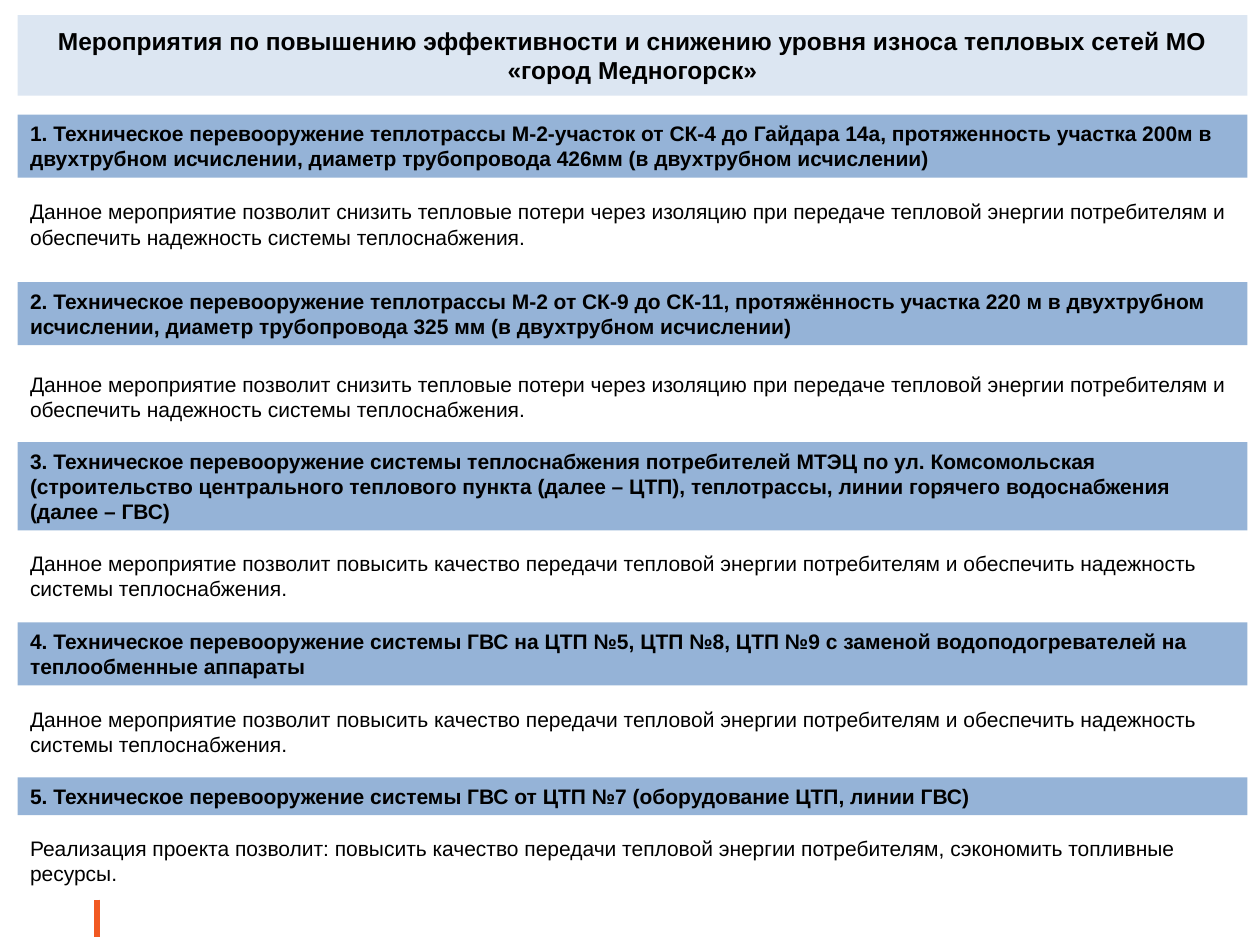
import pptx
import pptx.dml.color
import pptx.enum.shapes
import pptx.enum.text
import pptx.oxml
import pptx.oxml.ns
import pptx.util
from pptx.util import Inches

COLORS = {
    "title": "DCE6F2",
    "heading": "95B3D7",
    "text": "000000",
    "accent": "F15922",
}
FONT = "Arial"
LEFT, WIDTH = 0.14, 9.76

TITLE = (
    "Мероприятия по повышению эффективности и снижению уровня износа "
    "тепловых сетей МО «город Медногорск»"
)
HEAT_LOSS = (
    "Данное мероприятие позволит снизить тепловые потери через изоляцию при передаче "
    "тепловой энергии потребителям и обеспечить надежность системы теплоснабжения."
)
QUALITY = (
    "Данное мероприятие позволит повысить качество передачи тепловой энергии "
    "потребителям и обеспечить надежность системы теплоснабжения."
)
SAVINGS = (
    "Реализация проекта позволит: повысить качество передачи тепловой энергии "
    "потребителям, сэкономить топливные ресурсы."
)

# heading top, heading height, heading, effect top, effect
MEASURES = [
    (0.91, 0.5,
     "1. Техническое перевооружение теплотрассы М-2-участок от СК-4 до Гайдара 14а, "
     "протяженность участка 200м в двухтрубном исчислении, диаметр трубопровода 426мм "
     "(в двухтрубном исчислении)",
     1.53, HEAT_LOSS),
    (2.24, 0.5,
     "2. Техническое перевооружение теплотрассы М-2 от СК-9 до СК-11, протяжённость "
     "участка 220 м в двухтрубном исчислении, диаметр трубопровода 325 мм "
     "(в двухтрубном исчислении)",
     2.9, HEAT_LOSS),
    (3.51, 0.7,
     "3. Техническое перевооружение системы теплоснабжения потребителей МТЭЦ по "
     "ул. Комсомольская (строительство центрального теплового пункта (далее – ЦТП), "
     "теплотрассы, линии горячего водоснабжения (далее – ГВС)",
     4.32, QUALITY),
    (4.94, 0.5,
     "4. Техническое перевооружение системы ГВС на ЦТП №5, ЦТП №8, ЦТП №9 с заменой "
     "водоподогревателей на теплообменные аппараты",
     5.56, QUALITY),
    (6.17, 0.3,
     "5. Техническое перевооружение системы ГВС от ЦТП №7 (оборудование ЦТП, линии ГВС)",
     6.58, SAVINGS),
]


def rgb(name):
    return pptx.dml.color.RGBColor.from_string(COLORS[name])


def write(sp, text, size, bold, align, anchor):
    tf = sp.text_frame
    tf.word_wrap = True
    tf.vertical_anchor = anchor
    tf.margin_left = tf.margin_right = Inches(0.1)
    tf.margin_top = tf.margin_bottom = Inches(0.05)
    p = tf.paragraphs[0]
    p.alignment = align
    r = p.add_run()
    r.text = text
    r.font.name = FONT
    r.font.size = pptx.util.Pt(size)
    r.font.bold = bold
    r.font.color.rgb = rgb("text")


def add_band(s, top, height, fill, text, size=12,
             align=pptx.enum.text.PP_ALIGN.LEFT,
             anchor=pptx.enum.text.MSO_ANCHOR.TOP):
    """Add a full-width filled bar with bold text."""
    sp = s.shapes.add_shape(
        pptx.enum.shapes.MSO_SHAPE.RECTANGLE,
        Inches(LEFT), Inches(top), Inches(WIDTH), Inches(height))
    sp.shadow.inherit = False
    sp.fill.solid()
    sp.fill.fore_color.rgb = rgb(fill)
    sp.line.fill.background()
    write(sp, text, size, True, align, anchor)


def add_effect(s, top, text):
    """Add the plain paragraph under a heading."""
    sp = s.shapes.add_textbox(
        Inches(LEFT), Inches(top), Inches(WIDTH), Inches(0.5))
    write(sp, text, 12, False, pptx.enum.text.PP_ALIGN.LEFT,
          pptx.enum.text.MSO_ANCHOR.TOP)


def add_accent_line(s):
    line = s.shapes.add_connector(
        pptx.enum.shapes.MSO_CONNECTOR.STRAIGHT,
        Inches(0.77), Inches(7.14), Inches(0.77), Inches(7.44))
    line.line.color.rgb = rgb("accent")
    line.line.width = pptx.util.Pt(3)
    line._element.spPr.append(
        pptx.oxml.parse_xml(f"<a:effectLst {pptx.oxml.ns.nsdecls('a')}/>"))


def main():
    prs = pptx.Presentation()
    prs.slide_width = Inches(10)
    prs.slide_height = Inches(7.5)
    s = prs.slides.add_slide(prs.slide_layouts[6])

    add_accent_line(s)
    add_band(s, 0.12, 0.64, "title", TITLE, 14,
             pptx.enum.text.PP_ALIGN.CENTER, pptx.enum.text.MSO_ANCHOR.MIDDLE)
    for top, height, heading, effect_top, effect in MEASURES:
        add_band(s, top, height, "heading", heading)
        add_effect(s, effect_top, effect)

    prs.save("out.pptx")


if __name__ == "__main__":
    main()
